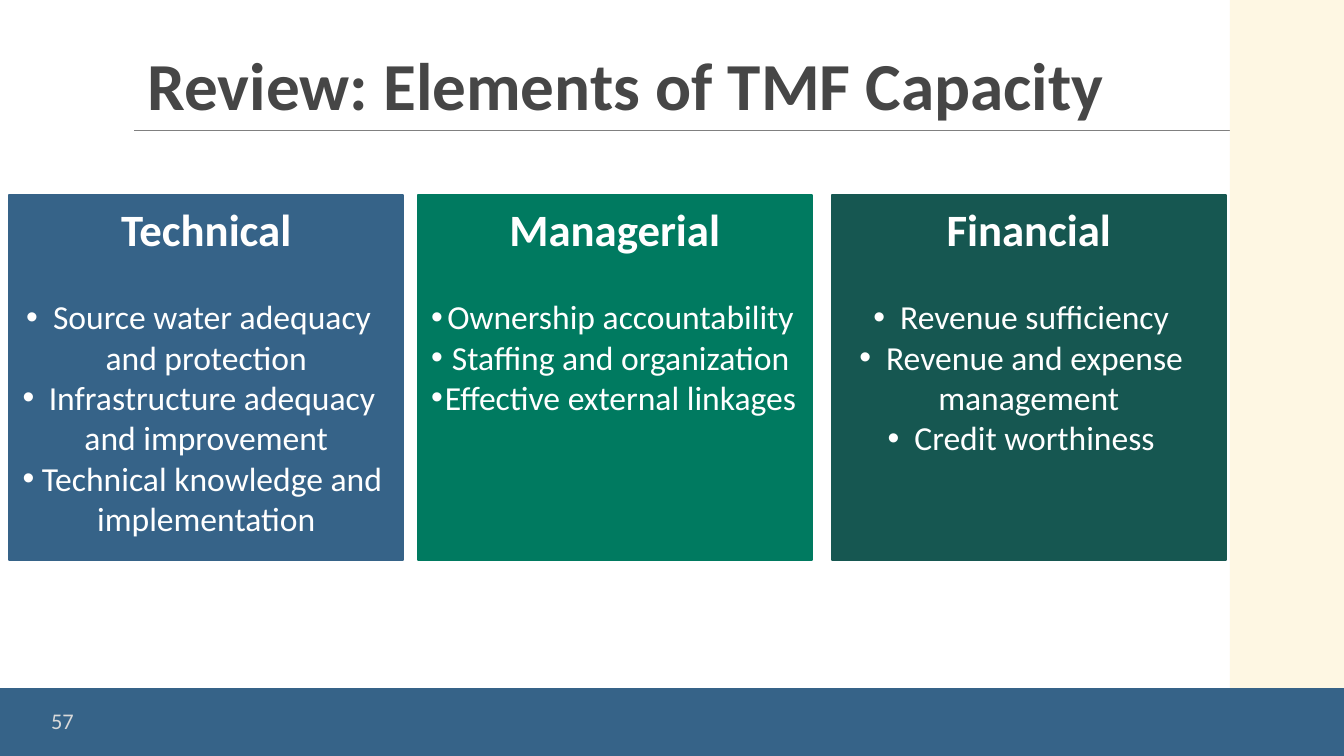
"""Build the slide that reviews the elements of TMF capacity."""
from dataclasses import dataclass

from lxml.etree import SubElement
from pptx import Presentation
from pptx.dml.color import RGBColor as Color
from pptx.enum.shapes import MSO_CONNECTOR as Connector, MSO_SHAPE as Shape
from pptx.enum.text import MSO_ANCHOR as Anchor, PP_ALIGN as Align
from pptx.oxml.ns import qn
from pptx.util import Inches, Pt


@dataclass(frozen=True)
class Theme:
    font: str = "Calibri"
    background: str = "FFFFFF"
    blue: str = "366388"
    green: str = "007A60"
    teal: str = "165751"
    cream: str = "FEF7E3"
    rule: str = "808080"
    title: str = "464646"
    card_text: str = "FFFFFF"
    number: str = "D9D9D9"
    title_size: int = 36
    heading_size: int = 24
    body_size: int = 18
    number_size: int = 12
    list_gap: int = 22


class SlideBuilder:
    def __init__(self, slide, theme):
        self.slide = slide
        self.theme = theme
        fill = slide.background.fill
        fill.solid()
        fill.fore_color.rgb = Color.from_string(theme.background)

    def format_runs(self, paragraph, size, color, bold=False):
        for run in paragraph.runs:
            run.font.name = self.theme.font
            run.font.size = Pt(size)
            run.font.bold = bold
            run.font.color.rgb = Color.from_string(color)

    def rectangle(self, left, top, width, height, color, outlined=False):
        shape = self.slide.shapes.add_shape(
            Shape.RECTANGLE, Inches(left), Inches(top), Inches(width), Inches(height))
        shape.shadow.inherit = False
        shape.fill.solid()
        shape.fill.fore_color.rgb = Color.from_string(color)
        if outlined:
            shape.line.color.rgb = Color.from_string(color)
            shape.line.width = Pt(1)
        else:
            shape.line.fill.background()
        return shape

    def rule(self, left, right, top):
        line = self.slide.shapes.add_connector(
            Connector.STRAIGHT, Inches(left), Inches(top), Inches(right), Inches(top))
        line.line.color.rgb = Color.from_string(self.theme.rule)
        line.line.width = Pt(0.5)
        SubElement(line._element.spPr, qn("a:effectLst"))

    def text(self, left, top, width, height, text, size, color, anchor,
             align=Align.LEFT, bold=False, line_spacing=1.0):
        box = self.slide.shapes.add_textbox(
            Inches(left), Inches(top), Inches(width), Inches(height))
        frame = box.text_frame
        frame.word_wrap = True
        frame.vertical_anchor = anchor
        frame.text = text
        paragraph = frame.paragraphs[0]
        paragraph.alignment = align
        paragraph.line_spacing = line_spacing
        self.format_runs(paragraph, size, color, bold)

    def bullet(self, frame, text):
        paragraph = frame.add_paragraph()
        paragraph.text = text
        paragraph.alignment = Align.CENTER
        properties = paragraph._p.get_or_add_pPr()
        properties.set("marL", "0")
        properties.set("indent", str(-Inches(0.2)))
        SubElement(properties, qn("a:buFont"), typeface="Arial")
        SubElement(properties, qn("a:buChar"), char="•")
        self.format_runs(paragraph, self.theme.body_size, self.theme.card_text)
        return paragraph

    def card(self, left, color, heading, items):
        theme = self.theme
        frame = self.rectangle(left, 1.45, 2.93, 2.72, color, outlined=True).text_frame
        frame.word_wrap = True
        frame.vertical_anchor = Anchor.TOP
        frame.text = heading
        paragraph = frame.paragraphs[0]
        paragraph.alignment = Align.CENTER
        self.format_runs(paragraph, theme.heading_size, theme.card_text, bold=True)
        bullets = [self.bullet(frame, item) for item in items]
        bullets[0].space_before = Pt(theme.list_gap)


def main():
    presentation = Presentation()
    presentation.slide_width = Inches(10)
    presentation.slide_height = Inches(10) * 9 // 16
    theme = Theme()
    slide = presentation.slides.add_slide(presentation.slide_layouts[6])
    builder = SlideBuilder(slide, theme)

    builder.rule(1, 9.18, 0.97)
    builder.rectangle(9.15, 0, 0.85, 5.62, theme.cream)
    builder.rectangle(0, 5.12, 10, 0.52, theme.blue)
    builder.text(1, 0.14, 8.15, 0.83, "Review: Elements of TMF Capacity",
                 theme.title_size, theme.title, Anchor.BOTTOM,
                 bold=True, line_spacing=0.85)

    cards = [
        (0.07, theme.blue, "Technical", [
            "Source water adequacy and protection",
            "Infrastructure adequacy and improvement",
            "Technical knowledge and implementation"]),
        (3.11, theme.green, "Managerial", [
            "Ownership accountability",
            "Staffing and organization",
            "Effective external linkages"]),
        (6.19, theme.teal, "Financial", [
            "Revenue sufficiency",
            "Revenue and expense management",
            "Credit worthiness"]),
    ]
    for card in cards:
        builder.card(*card)

    builder.text(0.11, 5.21, 0.71, 0.3, "57", theme.number_size, theme.number,
                 Anchor.MIDDLE, align=Align.CENTER)
    presentation.save("out.pptx")


if __name__ == "__main__":
    main()
